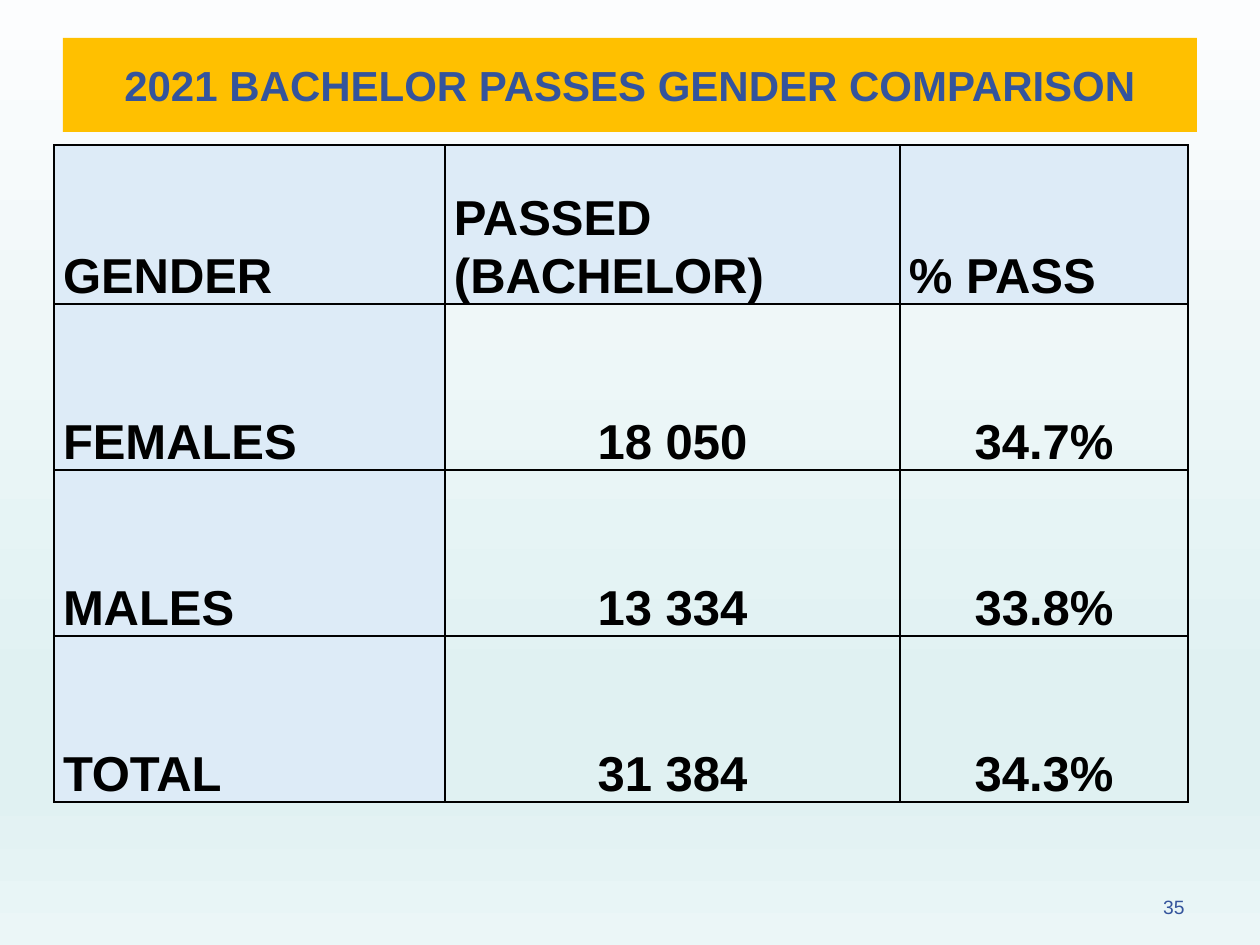
"""Build a slide that compares bachelor passes by gender."""
from lxml.etree import SubElement
from pptx import Presentation
from pptx.dml.color import RGBColor
from pptx.enum.shapes import MSO_SHAPE
from pptx.enum.text import MSO_ANCHOR, PP_ALIGN
from pptx.oxml.ns import qn
from pptx.util import Pt

SCALE = 914400 / 126
BLUE, GOLD, PALE, BLACK = "34549C", "FFC000", "DDEBF7", "000000"
STOPS = [(0, "FCFDFE"), (74, "E0F1F2"), (83, "E0F1F2"), (100, "EBF6F7")]
ROWS = [
    ["GENDER", "PASSED\n(BACHELOR)", "% PASS"],
    ["FEMALES", "18 050", "34.7%"],
    ["MALES", "13 334", "33.8%"],
    ["TOTAL", "31 384", "34.3%"],
]


def px(size):
    return round(size * SCALE)


def tint(code):
    return RGBColor.from_string(code)


class Deck:
    """Holds the style and the current slide."""

    def __init__(self, wide, high, face):
        self.face = face
        self.prs = Presentation()
        self.prs.slide_width, self.prs.slide_height = px(wide), px(high)
        self.slide = self.prs.slides.add_slide(self.prs.slide_layouts[6])

    def shade(self, stops):
        fill = self.slide.background.fill
        fill.gradient()
        fill.gradient_angle = 270
        group = next(self.slide.element.iter(qn("a:gsLst")))
        for old in list(group):
            group.remove(old)
        for spot, code in stops:
            stop = SubElement(group, qn("a:gs"), pos=str(spot * 1000))
            SubElement(stop, qn("a:srgbClr"), val=code)

    def letter(self, frame, text, size, color, bold, align, lead=1.0):
        frame.text = text
        for para in frame.paragraphs:
            para.alignment, para.line_spacing = align, lead
            for run in para.runs:
                font = run.font
                font.name, font.size, font.bold = self.face, Pt(size), bold
                font.color.rgb = tint(color)

    def banner(self, text, *box):
        shape = self.slide.shapes.add_shape(MSO_SHAPE.RECTANGLE, *map(px, box))
        shape.shadow.inherit = False
        shape.fill.solid()
        shape.fill.fore_color.rgb = tint(GOLD)
        shape.line.fill.background()
        shape.text_frame.vertical_anchor = MSO_ANCHOR.MIDDLE
        self.letter(shape.text_frame, text, 24, BLUE, True, PP_ALIGN.CENTER)

    def label(self, text, *box):
        frame = self.slide.shapes.add_textbox(*map(px, box)).text_frame
        frame.word_wrap = True
        self.letter(frame, text, 11, BLUE, False, PP_ALIGN.RIGHT, 0.9)

    def border(self, cell):
        props = cell._tc.get_or_add_tcPr()
        for side in ("lnL", "lnR", "lnT", "lnB"):
            line = SubElement(props, qn(f"a:{side}"), w=str(Pt(1)))
            fill = SubElement(line, qn("a:solidFill"))
            SubElement(fill, qn("a:srgbClr"), val=BLACK)

    def table(self, rows, left, top, wides, highs):
        box = map(px, (left, top, sum(wides), sum(highs)))
        grid = self.slide.shapes.add_table(len(rows), len(wides), *box).table
        grid.first_row = grid.horz_banding = False
        for col, wide in zip(grid.columns, wides):
            col.width = px(wide)
        for i, (row, high) in enumerate(zip(rows, highs)):
            grid.rows[i].height = px(high)
            for j, text in enumerate(row):
                self.fill(grid.cell(i, j), text, i == 0 or j == 0)

    def fill(self, cell, text, head):
        self.border(cell)
        cell.margin_left = cell.margin_right = px(9)
        cell.margin_top = cell.margin_bottom = 0
        cell.vertical_anchor = MSO_ANCHOR.BOTTOM
        if head:
            cell.fill.solid()
            cell.fill.fore_color.rgb = tint(PALE)
        else:
            cell.fill.background()
        align = PP_ALIGN.LEFT if head else PP_ALIGN.CENTER
        self.letter(cell.text_frame, text, 28, BLACK, True, align, 1.07)


def main():
    deck = Deck(1260, 945, "Arial")
    deck.shade(STOPS)
    deck.banner("2021 BACHELOR PASSES GENDER COMPARISON", 63, 38, 1134, 94)
    deck.label("35", 903, 892, 294, 34)
    deck.table(ROWS, 54, 145, [391, 455, 288], [159] + [166] * 3)
    deck.prs.save("out.pptx")


if __name__ == "__main__":
    main()
